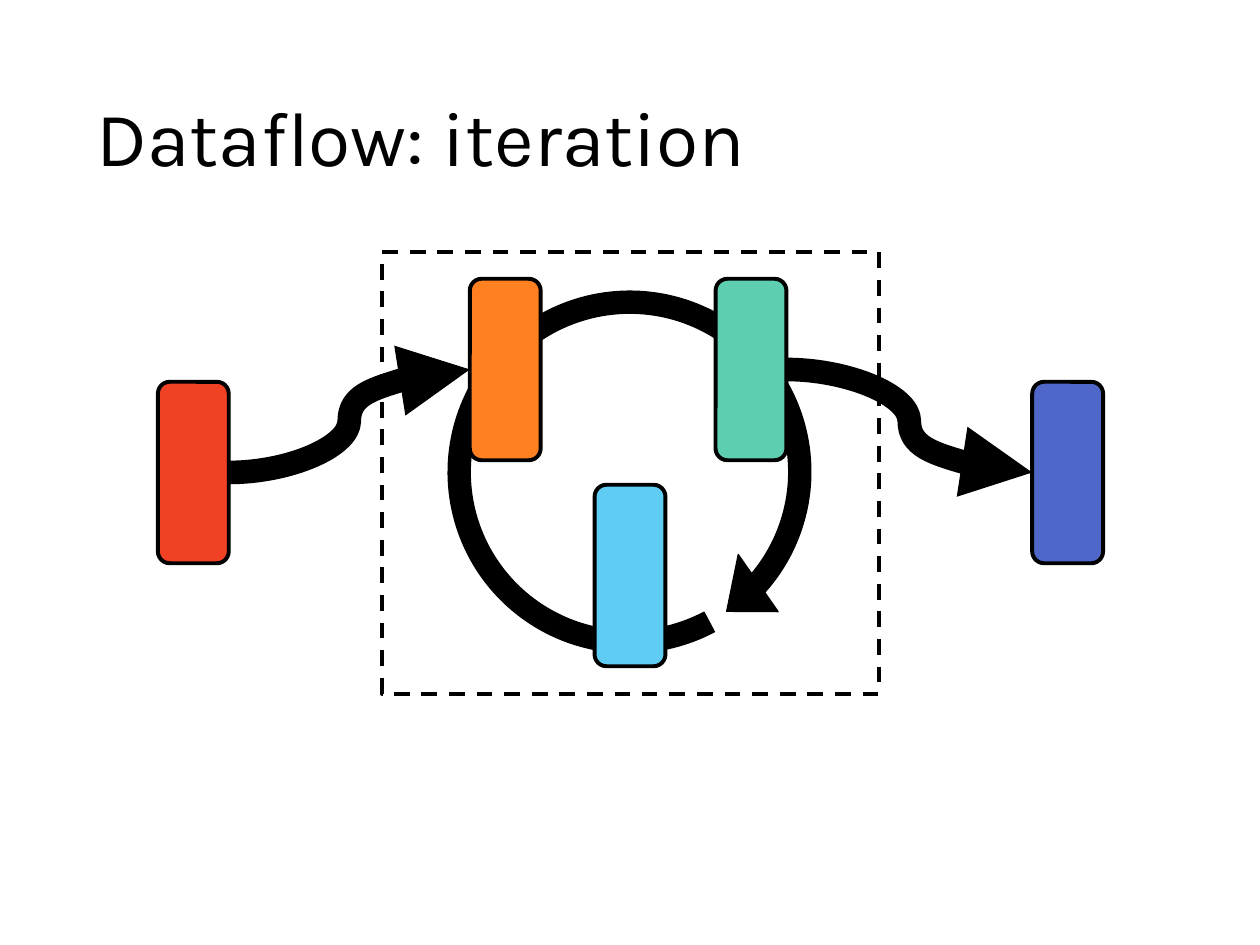
from dataclasses import dataclass

from lxml import etree
from pptx import Presentation
from pptx.dml.color import RGBColor
from pptx.enum.dml import MSO_LINE
from pptx.enum.shapes import MSO_CONNECTOR, MSO_SHAPE
from pptx.enum.text import MSO_ANCHOR, MSO_AUTO_SIZE, PP_ALIGN
from pptx.oxml.ns import qn
from pptx.util import Inches, Pt

CURVE = MSO_CONNECTOR.CURVE
RECTANGLE = MSO_SHAPE.RECTANGLE
ROUNDED = MSO_SHAPE.ROUNDED_RECTANGLE
CIRCULAR_ARROW = MSO_SHAPE.CIRCULAR_ARROW
DASH = MSO_LINE.DASH
MIDDLE = MSO_ANCHOR.MIDDLE
NO_AUTOFIT = MSO_AUTO_SIZE.NONE
LEFT = PP_ALIGN.LEFT

TITLE_ONLY = 5
NODE_WIDTH = 0.75
NODE_HEIGHT = 1.92
OUTLINE = 3
COLOURS = {
    "black": "000000",
    "white": "FFFFFF",
    "red": "F14124",
    "orange": "FF8021",
    "green": "5DCEAF",
    "sky": "5ECCF3",
    "indigo": "4E67C8",
}


@dataclass(frozen=True)
class Node:
    left: float
    top: float
    colour: str

    @property
    def right(self) -> float:
        return self.left + NODE_WIDTH

    @property
    def middle(self) -> float:
        return self.top + NODE_HEIGHT / 2


SOURCE = Node(1.67, 4.04, "red")
LOOP_ENTRY = Node(4.97, 2.95, "orange")
LOOP_EXIT = Node(7.57, 2.95, "green")
FEEDBACK = Node(6.29, 5.13, "sky")
SINK = Node(10.92, 4.04, "indigo")
NODES = (SOURCE, LOOP_ENTRY, LOOP_EXIT, FEEDBACK, SINK)
FLOWS = ((SOURCE, LOOP_ENTRY), (LOOP_EXIT, SINK))


def rgb(name: str) -> RGBColor:
    return RGBColor.from_string(COLOURS[name])


def add_outlined(page, kind, left: float, top: float, width: float, height: float,
                 fill: str | None, line_width: float):
    shape = page.shapes.add_shape(
        kind, Inches(left), Inches(top), Inches(width), Inches(height))
    shape.shadow.inherit = False
    if fill is None:
        shape.fill.background()
    else:
        shape.fill.solid()
        shape.fill.fore_color.rgb = rgb(fill)
    shape.line.color.rgb = rgb("black")
    shape.line.width = Pt(line_width)
    return shape


def add_title(page, text: str) -> None:
    title = page.shapes.title
    title.left, title.top = Inches(0.92), Inches(0.53)
    title.width, title.height = Inches(11.5), Inches(1.93)
    frame = title.text_frame
    frame.text = text
    frame.word_wrap = True
    frame.auto_size = NO_AUTOFIT
    frame.vertical_anchor = MIDDLE
    para = frame.paragraphs[0]
    para.alignment = LEFT
    para.line_spacing = 0.9
    font = para.runs[0].font
    font.name = "Karla"
    font.size = Pt(58.7)
    font.color.rgb = rgb("black")


def add_loop(page) -> None:
    loop = add_outlined(page, CIRCULAR_ARROW, 4.49, 2.83, 4.34, 4.33, "black", 1)
    loop.rotation = 346.2
    for index, value in enumerate((0.054, 8.578, 32.76, 45.488, 0.085)):
        loop.adjustments[index] = value


def add_flow(page, start: Node, end: Node) -> None:
    flow = page.shapes.add_connector(
        CURVE, Inches(start.right), Inches(start.middle),
        Inches(end.left), Inches(end.middle))
    flow.line.color.rgb = rgb("black")
    flow.line.width = Pt(18)
    etree.SubElement(flow.line._get_or_add_ln(), qn("a:tailEnd"), type="triangle")
    etree.SubElement(flow._element.spPr, qn("a:effectLst"))


def add_node(page, node: Node) -> None:
    add_outlined(page, ROUNDED, node.left, node.top,
                 NODE_WIDTH, NODE_HEIGHT, node.colour, OUTLINE)


def add_loop_scope(page) -> None:
    scope = add_outlined(page, RECTANGLE, 4.04, 2.67, 5.26, 4.67, None, OUTLINE)
    scope.line.dash_style = DASH


def main() -> None:
    deck = Presentation()
    deck.slide_width, deck.slide_height = Inches(13.33), Inches(10)
    page = deck.slides.add_slide(deck.slide_layouts[TITLE_ONLY])
    page.background.fill.solid()
    page.background.fill.fore_color.rgb = rgb("white")

    add_title(page, "Dataflow: iteration")
    add_loop(page)
    for start, end in FLOWS:
        add_flow(page, start, end)
    for node in NODES:
        add_node(page, node)
    add_loop_scope(page)

    deck.save("out.pptx")


if __name__ == "__main__":
    main()
